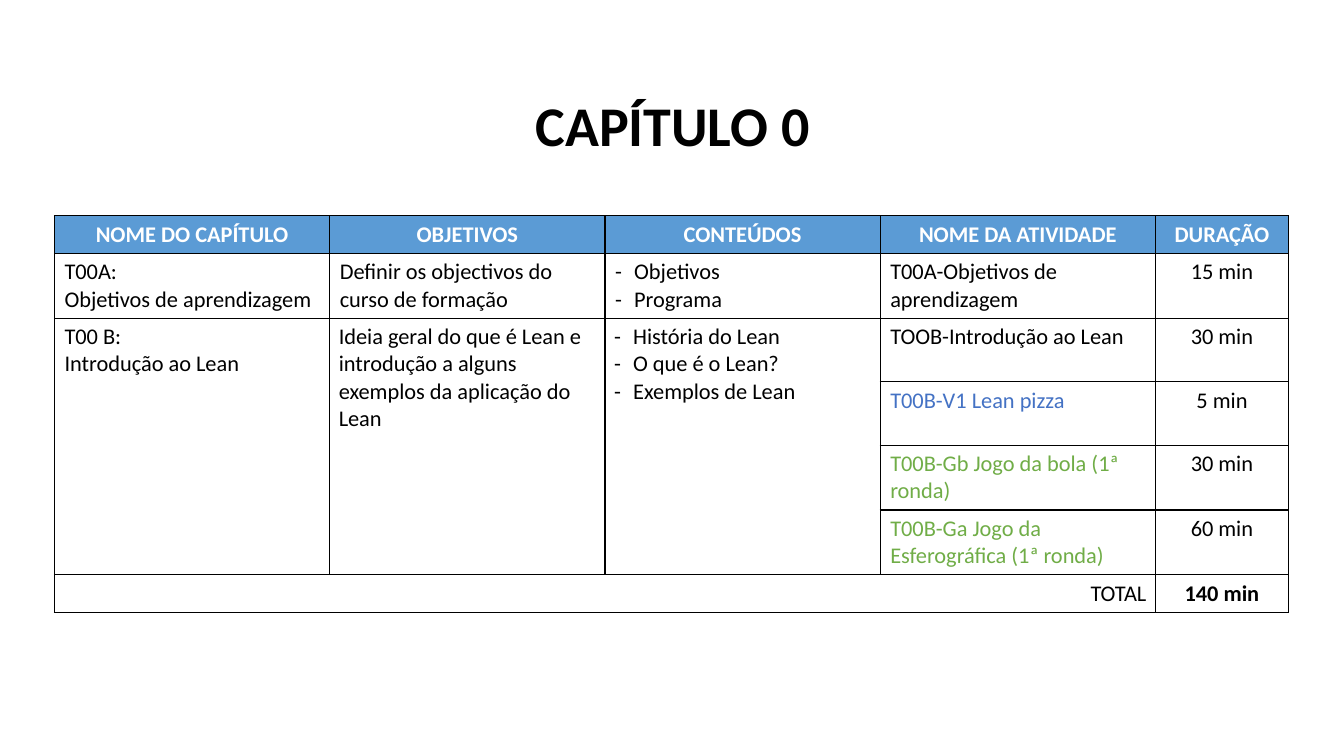
"""Build the chapter 0 training plan slide."""
from dataclasses import dataclass

from lxml import etree
from pptx import Presentation
from pptx import util as u
from pptx.dml.color import RGBColor
from pptx.enum import text
from pptx.oxml.ns import qn

BLACK, WHITE, HEADER_BLUE = "000000", "FFFFFF", "5B9BD5"
VIDEO_BLUE, GAME_GREEN = "4472C4", "70AD47"
LEFT, CENTER, RIGHT = text.PP_ALIGN.LEFT, text.PP_ALIGN.CENTER, text.PP_ALIGN.RIGHT
FONT = "Calibri"
COLUMN_WIDTHS = [2.73, 2.73, 2.73, 2.73, 1.32]
ROW_HEIGHTS = [0.37] + [0.63] * 5 + [0.37]


@dataclass
class Entry:
    """Content of one table cell, with its span and formatting."""
    row: int
    column: int
    lines: list[str]
    color: str = BLACK
    fill: str = WHITE
    bold: bool = False
    align: text.PP_ALIGN = LEFT
    bulleted: bool = False
    rows: int = 1
    columns: int = 1
    margin: float = 0.1


HEADERS = ["NOME DO CAPÍTULO", "OBJETIVOS", "CONTEÚDOS", "NOME DA ATIVIDADE", "DURAÇÃO"]
ACTIVITIES = [
    ("T00A-Objetivos de aprendizagem", BLACK, "15 min"),
    ("TOOB-Introdução ao Lean", BLACK, "30 min"),
    ("T00B-V1 Lean pizza", VIDEO_BLUE, "5 min"),
    ("T00B-Gb Jogo da bola (1ª ronda)", GAME_GREEN, "30 min"),
    ("T00B-Ga Jogo da Esferográfica (1ª ronda)", GAME_GREEN, "60 min"),
]
ENTRIES = [
    Entry(1, 0, ["T00A:\vObjetivos de aprendizagem"]),
    Entry(1, 1, ["Definir os objectivos do curso de formação"]),
    Entry(1, 2, ["Objetivos", "Programa"], bulleted=True),
    Entry(2, 0, ["T00 B:\vIntrodução ao Lean"], rows=4),
    Entry(2, 1, ["Ideia geral do que é Lean e introdução a alguns exemplos da aplicação do Lean"],
          rows=4, margin=0.09),
    Entry(2, 2, ["História do Lean", "O que é o Lean?", "Exemplos de Lean"],
          bulleted=True, rows=4, margin=0.09),
    Entry(6, 0, ["TOTAL"], align=RIGHT, columns=4, margin=0.09),
    Entry(6, 4, ["140 min"], bold=True, align=CENTER),
]
ENTRIES += [Entry(0, column, [name], WHITE, HEADER_BLUE, True, CENTER)
            for column, name in enumerate(HEADERS)]
for number, (activity, color, duration) in enumerate(ACTIVITIES, start=1):
    ENTRIES += [Entry(number, 3, [activity], color),
                Entry(number, 4, [duration], align=CENTER)]


def rgb(value: str) -> RGBColor:
    """Turn a hex string into a colour."""
    return RGBColor.from_string(value)


def format_runs(para, size: float, color: str, bold: bool) -> None:
    """Apply the slide font to every run of a paragraph."""
    for span in para.runs:
        span.font.name = FONT
        span.font.size = u.Pt(size)
        span.font.bold = bold
        span.font.color.rgb = rgb(color)


def add_dash(para) -> None:
    """Give a paragraph a hanging dash bullet."""
    properties = para._p.get_or_add_pPr()
    indent = u.Inches(0.19)
    properties.set("marL", str(indent))
    properties.set("indent", str(-indent))
    etree.SubElement(properties, qn("a:buFont"), typeface=FONT)
    etree.SubElement(properties, qn("a:buChar"), char="-")


def style_cell(cell, fill: str) -> None:
    """Draw the cell borders and fill."""
    properties = cell._tc.get_or_add_tcPr()
    for side in ("a:lnL", "a:lnR", "a:lnT", "a:lnB"):
        line = etree.SubElement(properties, qn(side), w=str(u.Pt(1)))
        solid = etree.SubElement(line, qn("a:solidFill"))
        etree.SubElement(solid, qn("a:srgbClr"), val=BLACK)
    cell.fill.solid()
    cell.fill.fore_color.rgb = rgb(fill)


def write_entry(table, entry: Entry) -> None:
    """Write one entry into the table, merging its cells if needed."""
    cell = table.cell(entry.row, entry.column)
    if entry.rows > 1 or entry.columns > 1:
        cell.merge(table.cell(entry.row + entry.rows - 1, entry.column + entry.columns - 1))
    cell.margin_left = cell.margin_right = u.Inches(entry.margin)
    if entry.row == 0:
        cell.vertical_anchor = text.MSO_ANCHOR.MIDDLE
    frame = cell.text_frame
    for index, line in enumerate(entry.lines):
        para = frame.add_paragraph() if index else frame.paragraphs[0]
        para.text = line
        para.alignment = entry.align
        if entry.bulleted:
            add_dash(para)
        format_runs(para, 16, entry.color, entry.bold)


def add_plan(slide) -> None:
    """Add the chapter plan table."""
    table = slide.shapes.add_table(
        len(ROW_HEIGHTS), len(COLUMN_WIDTHS), u.Inches(0.54), u.Inches(2.14),
        u.Inches(sum(COLUMN_WIDTHS)), u.Inches(sum(ROW_HEIGHTS))).table
    table.horz_banding = False
    for column, width in zip(table.columns, COLUMN_WIDTHS):
        column.width = u.Inches(width)
    for index, (row, height) in enumerate(zip(table.rows, ROW_HEIGHTS)):
        row.height = u.Inches(height)
        for cell in row.cells:
            style_cell(cell, WHITE if index else HEADER_BLUE)
    for entry in ENTRIES:
        write_entry(table, entry)


def add_title(slide) -> None:
    """Fill and place the title placeholder."""
    title = slide.shapes.title
    title.left, title.top = u.Inches(2.51), u.Inches(0.85)
    title.width, title.height = u.Inches(8.32), u.Inches(0.77)
    frame = title.text_frame
    frame.text = "CAPÍTULO 0"
    frame.word_wrap = True
    frame.auto_size = text.MSO_AUTO_SIZE.NONE
    frame.vertical_anchor = text.MSO_ANCHOR.TOP
    frame.paragraphs[0].alignment = CENTER
    format_runs(frame.paragraphs[0], 40, BLACK, True)


def main() -> None:
    """Build and save the deck."""
    deck = Presentation()
    deck.slide_width, deck.slide_height = u.Inches(13.33), u.Inches(7.5)
    slide = deck.slides.add_slide(deck.slide_layouts[5])
    add_title(slide)
    add_plan(slide)
    deck.save("out.pptx")


if __name__ == "__main__":
    main()
